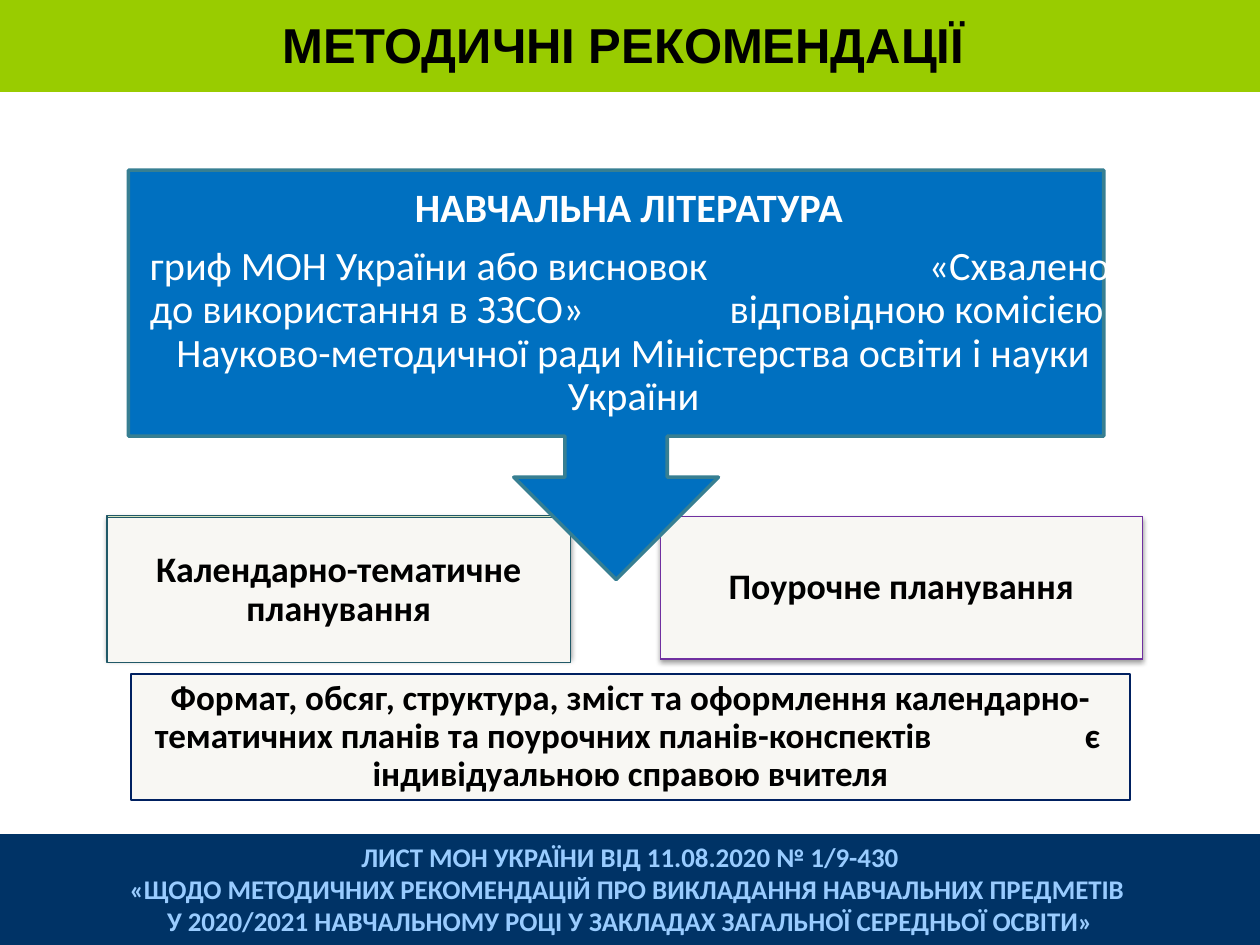
from lxml import etree
from pptx import Presentation
from pptx import util as u
from pptx.dml.color import RGBColor
from pptx.enum import shapes, text
from pptx.oxml.ns import qn

CELL = 0.1  # inches: the slide is a grid of 100 columns by 75 rows
RECT = shapes.MSO_SHAPE.RECTANGLE
PALE = "F8F7F3"


def colour(value):
    return RGBColor.from_string(value)


def cells(*counts):
    return [u.Inches(count * CELL) for count in counts]


class Builder:
    def __init__(self):
        self.deck = Presentation()
        self.deck.slide_width, self.deck.slide_height = cells(100, 75)
        self.page = self.deck.slides.add_slide(self.deck.slide_layouts[5])

    def label(self, box, lines, size, ink, font="Calibri", bold=True, insets=(1, 0.5, 1, 0.5),
              anchor=text.MSO_ANCHOR.MIDDLE, spacing=None, after=0):
        """Each line is a string, or (string, tab column, bold); a tab column makes it left-aligned."""
        frame = box.text_frame
        frame.word_wrap = True
        frame.auto_size = text.MSO_AUTO_SIZE.NONE
        frame.vertical_anchor = anchor
        frame.margin_left, frame.margin_top, frame.margin_right, frame.margin_bottom = cells(*insets)
        for index, line in enumerate(lines):
            words, tab, weight = (line, None, bold) if isinstance(line, str) else line
            para = frame.paragraphs[0] if index == 0 else frame.add_paragraph()
            para.text = words
            para.alignment = text.PP_ALIGN.LEFT if tab else text.PP_ALIGN.CENTER
            para.line_spacing = spacing
            para.space_before = u.Pt(0)
            para.space_after = u.Pt(after if index == 0 else 0)
            para.font.name, para.font.size, para.font.bold = font, u.Pt(size), weight
            para.font.color.rgb = colour(ink)
            if tab:
                self.tab_stop(para, tab)

    def tab_stop(self, para, column):
        stops = etree.Element(qn("a:tabLst"))
        etree.SubElement(stops, qn("a:tab"), pos=str(cells(column)[0]), algn="l")
        properties = para._p.get_or_add_pPr()
        properties.find(qn("a:defRPr")).addprevious(stops)

    def shape(self, kind, place, fill, line=None, width=0.75, shadow=False):
        box = self.page.shapes.add_shape(kind, *cells(*place))
        box.shadow.inherit = False
        box.fill.solid()
        box.fill.fore_color.rgb = colour(fill)
        if line:
            box.line.color.rgb = colour(line)
            box.line.width = u.Pt(width)
        else:
            box.line.fill.background()
        if shadow:
            effects = box._element.spPr.find(qn("a:effectLst"))
            outer = etree.SubElement(effects, qn("a:outerShdw"), blurRad=str(u.Pt(3.1)),
                                     dist=str(u.Pt(1.6)), dir="5400000", rotWithShape="0")
            black = etree.SubElement(outer, qn("a:srgbClr"), val="000000")
            etree.SubElement(black, qn("a:alpha"), val="38000")
        return box

    def textbox(self, place, lines, **style):
        self.label(self.page.shapes.add_textbox(*cells(*place)), lines, **style)

    def title(self, place, words, fill, **style):
        box = self.page.shapes.title
        box.left, box.top, box.width, box.height = cells(*place)
        box.fill.solid()
        box.fill.fore_color.rgb = colour(fill)
        self.label(box, [words], **style)


def main():
    slide = Builder()

    # Title band
    slide.title((0, -0.4, 100, 7.7), "МЕТОДИЧНІ РЕКОМЕНДАЦІЇ ", "99CC00",
                size=28, ink="000000", font="Arial")

    # Two kinds of planning, each card over a shadowed back
    cards = [
        ("Календарно-тематичне планування", "215968", "D7E4BD",
         (8.5, 40.9, 36.8, 11.2), (8.5, 41.1, 36.8, 11.5)),
        ("Поурочне планування", "7030A0", PALE,
         (52.4, 41, 38.3, 11.3), (52.4, 41, 38.3, 11.3)),
    ]
    for words, line, back_fill, back, front in cards:
        slide.shape(RECT, back, back_fill, line, shadow=True)
        card = slide.shape(RECT, front, PALE, line)
        slide.label(card, [words], 20.5, "000000", insets=(1.7, 0.3, 1.7, 0.3), spacing=0.9)

    # Literature callout pointing down at the cards
    slide.shape(shapes.MSO_SHAPE.DOWN_ARROW_CALLOUT, (10.2, 13.5, 77.4, 32.5),
                "0070C0", "377F92", width=2)
    slide.textbox((8.4, 13.5, 83.2, 21.2), [
        "НАВЧАЛЬНА ЛІТЕРАТУРА ",
        ("гриф МОН України або висновок\t«Схвалено", 61.8, False),
        ("до використання в ЗЗСО»\tвідповідною комісією", 46, False),
        ("Науково-методичної ради Міністерства освіти і науки України", None, False),
    ], size=23, ink="FFFFFF", insets=(3.5, 0, 2.9, 0), spacing=0.9, after=8)

    # Note on the teacher's choice
    note = slide.shape(RECT, (10.4, 53.5, 79.3, 10), PALE, "002060")
    slide.label(note, [
        "Формат, обсяг, структура, зміст та оформлення календарно-",
        ("тематичних планів та поурочних планів-конспектів\tє", 73.8, True),
        "індивідуальною справою вчителя",
    ], 20, "000000", insets=(1.9, 0, 1.9, 0), spacing=0.9)

    # Source band
    band = slide.shape(RECT, (0, 66.2, 100, 8.8), "003366")
    slide.label(band, [
        "ЛИСТ МОН УКРАЇНИ ВІД 11.08.2020 № 1/9-430",
        "«ЩОДО МЕТОДИЧНИХ РЕКОМЕНДАЦІЙ ПРО ВИКЛАДАННЯ НАВЧАЛЬНИХ ПРЕДМЕТІВ ",
        "У 2020/2021 НАВЧАЛЬНОМУ РОЦІ У ЗАКЛАДАХ ЗАГАЛЬНОЇ СЕРЕДНЬОЇ ОСВІТИ»",
    ], 15.4, "99CCFF", anchor=text.MSO_ANCHOR.TOP)

    slide.deck.save("out.pptx")


if __name__ == "__main__":
    main()
